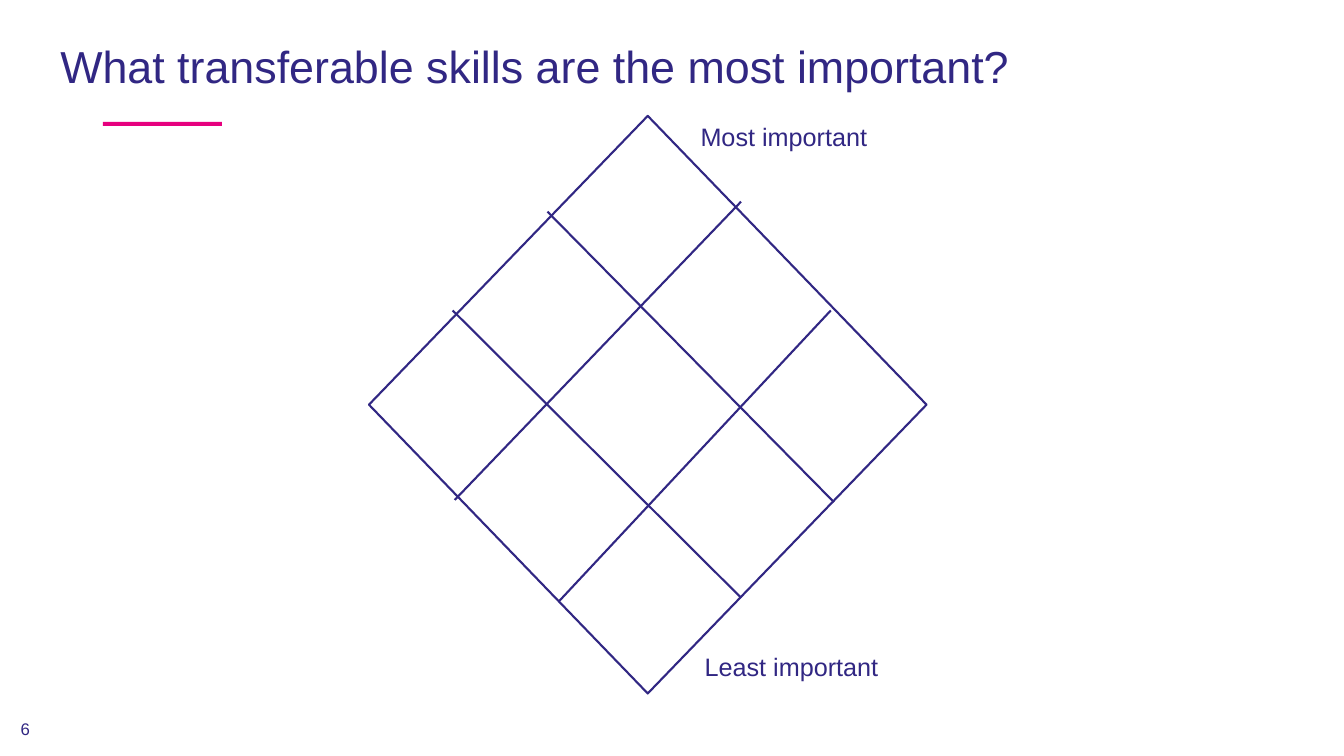
import pptx
import pptx.util
import pptx.dml.color
import pptx.enum.shapes
import pptx.enum.text
import pptx.oxml.ns
from lxml import etree

PX = 9144
COLORS = {"ink": "312783", "accent": "E6007E"}
ANCHOR = pptx.enum.text.MSO_ANCHOR
ALIGN = pptx.enum.text.PP_ALIGN
SHAPE = pptx.enum.shapes.MSO_SHAPE


class SlideBuilder:
    font = "Arial"
    line_width = 1.5

    def __init__(self, deck):
        self.slide = deck.slides.add_slide(deck.slide_layouts[6])

    def color(self, name):
        return pptx.dml.color.RGBColor.from_string(COLORS[name])

    def emu(self, lengths):
        return [length * PX for length in lengths]

    def outline(self, line):
        line.color.rgb = self.color("ink")
        line.width = pptx.util.Pt(self.line_width)

    def shape(self, kind, box, fill=None):
        shape = self.slide.shapes.add_shape(kind, *self.emu(box))
        shape.shadow.inherit = False
        if fill:
            shape.fill.solid()
            shape.fill.fore_color.rgb = self.color(fill)
            shape.line.fill.background()
        else:
            shape.fill.background()
            self.outline(shape.line)

    def line(self, start, end):
        line = self.slide.shapes.add_connector(
            pptx.enum.shapes.MSO_CONNECTOR.STRAIGHT, *self.emu(start + end))
        self.outline(line.line)
        properties = line._element.spPr
        etree.SubElement(properties, pptx.oxml.ns.qn("a:effectLst"))

    def text(self, wording, box, size, anchor=ANCHOR.TOP, align=ALIGN.LEFT, spacing=None):
        frame = self.slide.shapes.add_textbox(*self.emu(box)).text_frame
        frame.word_wrap = True
        frame.vertical_anchor = anchor
        paragraph = frame.paragraphs[0]
        paragraph.alignment = align
        if spacing:
            paragraph.line_spacing = spacing
        run = paragraph.add_run()
        run.text = wording
        run.font.name = self.font
        run.font.size = pptx.util.Pt(size)
        run.font.color.rgb = self.color("ink")


def main():
    deck = pptx.Presentation()
    deck.slide_width = 1333 * PX
    deck.slide_height = 750 * PX
    page = SlideBuilder(deck)

    page.shape(SHAPE.RECTANGLE, (102, 121, 118, 4), "accent")
    page.text("What transferable skills are the most important?",
              (50, 26, 1156, 71), 32, ANCHOR.BOTTOM, spacing=0.9)
    page.text("6", (0, 706, 50, 35), 12, ANCHOR.MIDDLE, ALIGN.CENTER)

    page.shape(SHAPE.DIAMOND, (366, 115, 553, 573))
    dividers = [
        ((449, 308), (735, 593)),
        ((543, 210), (827, 498)),
        ((735, 200), (451, 496)),
        ((824, 308), (554, 597)),
    ]
    for start, end in dividers:
        page.line(start, end)

    for rank, left, top in [("Most important", 685, 115), ("Least important", 689, 641)]:
        page.text(rank, (left, top, 377, 41), 18)

    deck.save("out.pptx")


if __name__ == "__main__":
    main()
